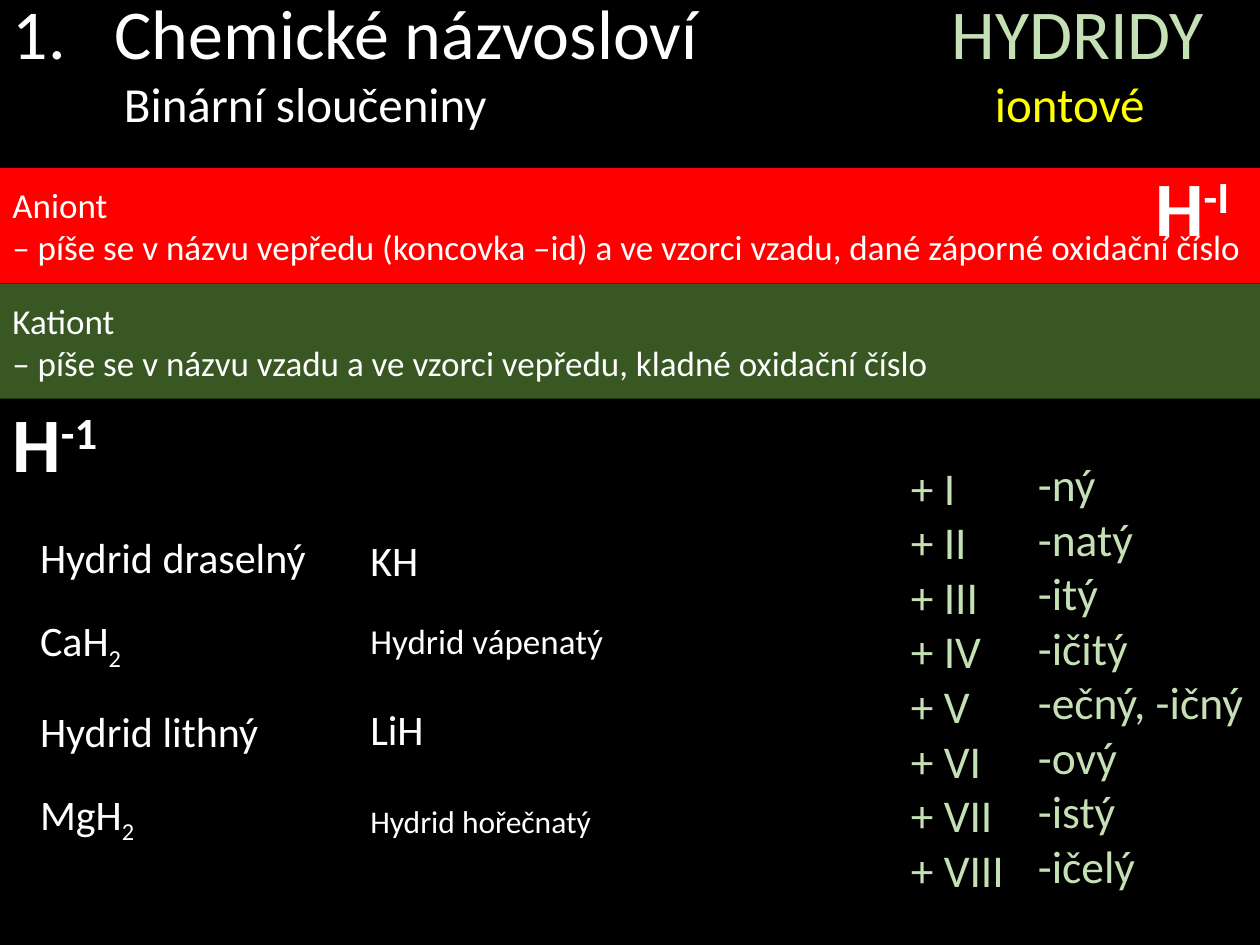
from lxml import etree
from pptx import Presentation
from pptx.dml.color import RGBColor
from pptx.enum import shapes, text
from pptx.oxml.ns import qn
from pptx.util import Pt

WHITE, BLACK, RED, GREEN = "FFFFFF", "000000", "FF0000", "385723"
PALE, YELLOW = "C5E0B4", "FFFF00"

HEADING = [("Chemické názvosloví", 40, WHITE), ("Binární sloučeniny", 28, WHITE)]
TOPIC = [("HYDRIDY", 40, PALE), ("iontové", 28, YELLOW)]
BANDS = [
    (96, RED, ["Aniont", "– píše se v názvu vepředu (koncovka –id) a ve vzorci vzadu, "
               "dané záporné oxidační číslo"]),
    (162, GREEN, ["Kationt", "– píše se v názvu vzadu a ve vzorci vepředu, "
                  "kladné oxidační číslo"]),
]
NUMBERS = ["+ I", "+ II", "+ III", "+ IV", "+ V", "+ VI", "+ VII", "+ VIII"]
ENDINGS = ["-ný", "-natý", "-itý", "-ičitý", "-ečný, -ičný", "-ový", "-istý", "-ičelý"]
ENDING_COLUMNS = [(513.4, 260, 103, NUMBERS), (586, 257.8, 134, ENDINGS)]
IONS = [(653, 82, 119, 70.6, ("H", "-I")), (0, 219.6, 78, 65.5, ("H", "-1"))]
QUESTIONS = ["Hydrid draselný", ("CaH", "2"), "Hydrid lithný", ("MgH", "2")]
ANSWERS = [("KH", 24, 295.2), ("Hydrid vápenatý", 20, 341.3),
           ("LiH", 24, 391.7), ("Hydrid hořečnatý", 18, 444.2)]
ROW_TOP, ROW_HEIGHT = 293, 49.7


def rgb(value):
    return RGBColor.from_string(value)


def paint(box, fill):
    box.fill.solid()
    box.fill.fore_color.rgb = rgb(fill)


def place(box, left, top, width, height):
    box.left, box.top, box.width, box.height = map(Pt, (left, top, width, height))


def write(box, lines, bold=False, shift=0):
    frame = box.text_frame
    frame.auto_size = text.MSO_AUTO_SIZE.NONE
    frame.word_wrap = True
    frame.vertical_anchor = text.MSO_ANCHOR.MIDDLE
    for index, (content, size, color) in enumerate(lines):
        paragraph = frame.paragraphs[0] if index == 0 else frame.add_paragraph()
        paragraph.alignment = text.PP_ALIGN.LEFT
        parts = (content,) if isinstance(content, str) else content
        for order, part in enumerate(parts):
            run = paragraph.add_run()
            run.text = part
            font = run.font
            font.name, font.size, font.bold = "Calibri", Pt(size), bold
            font.color.rgb = rgb(color)
            if order:
                run._r.get_or_add_rPr().set("baseline", str(shift * 1000))
    return frame


def add_panel(slide, bounds, fill, lines, shift=0):
    panel = slide.shapes.add_shape(shapes.MSO_SHAPE.RECTANGLE, *map(Pt, bounds))
    panel.shadow.inherit = False
    paint(panel, fill)
    panel.line.fill.background()
    write(panel, lines, shift=shift)


def add_heading(slide):
    title = slide.shapes.title
    place(title, 0, 0, 720, 118.8)
    paint(title, BLACK)
    title.line.color.rgb = rgb(BLACK)
    title.line.width = Pt(1)
    topic = slide.shapes.add_textbox(Pt(536.8), 0, Pt(183.2), Pt(118.8))
    for box, lines, indents in ((title, HEADING, (58.3, 63.6)),
                                (topic, TOPIC, (0, 24.6))):
        frame = write(box, lines)
        frame.margin_top, frame.margin_bottom = 0, Pt(48.8)
        for paragraph, indent in zip(frame.paragraphs, indents):
            paragraph._p.get_or_add_pPr().set("marL", str(Pt(indent)))
    properties = title.text_frame.paragraphs[0]._p.get_or_add_pPr()
    properties.set("indent", str(-Pt(58.3)))
    etree.SubElement(properties, qn("a:buFont"), typeface="+mj-lt")
    etree.SubElement(properties, qn("a:buAutoNum"), type="arabicPeriod")


def main():
    deck = Presentation()
    deck.slide_width, deck.slide_height = Pt(720), Pt(540)
    slide = deck.slides.add_slide(deck.slide_layouts[5])
    paint(slide.background, BLACK)
    add_heading(slide)
    for top, fill, lines in BANDS:
        add_panel(slide, (0, top, 724, 65.8), fill, [(line, 20, WHITE) for line in lines])
    for left, top, width, lines in ENDING_COLUMNS:
        add_panel(slide, (left, top, width, 255), BLACK, [(line, 26, PALE) for line in lines])
    for left, top, width, height, ion in IONS:
        box = slide.shapes.add_textbox(*map(Pt, (left, top, width, height)))
        write(box, [(ion, 44, WHITE)], bold=True, shift=30)
    for row, question in enumerate(QUESTIONS):
        add_panel(slide, (15.8, ROW_TOP + row * ROW_HEIGHT, 267, ROW_HEIGHT), BLACK,
                  [(question, 24, WHITE)], shift=-25)
    for answer, size, top in ANSWERS:
        add_panel(slide, (204.5, top, 151, ROW_HEIGHT), BLACK, [(answer, size, WHITE)])
    deck.save("out.pptx")


if __name__ == "__main__":
    main()
